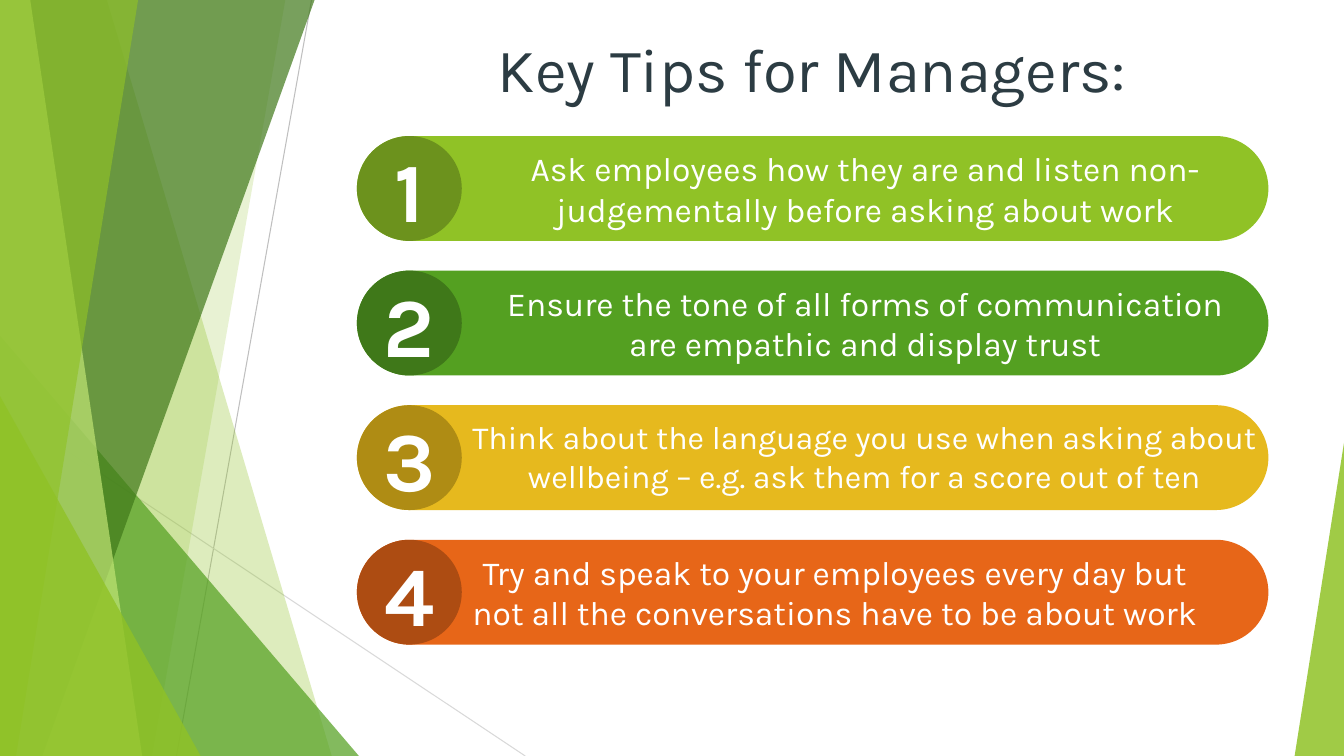
from dataclasses import dataclass

from lxml import etree
from pptx import Presentation
from pptx.dml.color import RGBColor
from pptx.enum.shapes import MSO_CONNECTOR, MSO_SHAPE
from pptx.enum.text import MSO_ANCHOR, PP_ALIGN
from pptx.oxml.ns import qn
from pptx.util import Inches, Pt

LINE = MSO_CONNECTOR.STRAIGHT
PILL = MSO_SHAPE.ROUNDED_RECTANGLE
DISC = MSO_SHAPE.OVAL
WEDGE = MSO_SHAPE.ISOSCELES_TRIANGLE
TOP = MSO_ANCHOR.TOP
MIDDLE = MSO_ANCHOR.MIDDLE
CENTER = PP_ALIGN.CENTER

FONT = "Karla"
WIDTH, HEIGHT = 13.33, 7.5
COLORS = {
    "white": "FFFFFF", "slate": "2C3C43", "gray": "BFBFBF", "silver": "D9D9D9",
    "lime": "90C226", "olive": "6C921D", "pale": "C0E474",
    "green": "54A021", "forest": "3F7819",
    "gold": "E6B91E", "bronze": "AF8C14",
    "orange": "E76618", "rust": "AD4C12",
}

# Row geometry
LEFT, FIRST, PITCH = 3.54, 1.35, 1.335
LENGTH, SIZE = 9.04, 1.04


@dataclass
class Ray:
    start: tuple
    end: tuple
    color: str


@dataclass
class Band:
    """Panel from the left edge to a slanted side."""
    upper: float
    lower: float
    color: str
    alpha: int


@dataclass
class Corner:
    """Right triangle standing on the bottom edge."""
    left: float
    top: float
    width: float
    peak: float
    color: str
    alpha: int


@dataclass
class Tip:
    text: str
    fill: str
    dark: str
    left: float = 4.88
    width: float = 7.4
    size: int = 24


DECOR = [
    Ray((3.09, 0), (1.75, HEIGHT), "gray"),
    Ray((0, 4.03), (5.21, HEIGHT), "silver"),
    Band(1.06, 3.29, "lime", 30),
    Band(2.83, 1.51, "lime", 20),
    Corner(0, 3.33, 3.56, 0, "green", 72),
    Band(3.12, 0.42, "forest", 70),
    Band(0.3, 1.41, "pale", 70),
    Band(1.37, 0.16, "lime", 65),
    Corner(0, 3.93, 1.99, 0, "lime", 80),
    Corner(12.84, 4.39, 0.49, 1, "lime", 85),
]
TIPS = [
    Tip("Ask employees how they are and listen non-judgementally before asking about work",
        "lime", "olive"),
    Tip("Ensure the tone of all forms of communication are empathic and display trust",
        "green", "forest"),
    Tip("Think about the language you use when asking about wellbeing – e.g. ask them "
        "for a score out of ten", "gold", "bronze", left=4.58, width=8, size=23),
    Tip("Try and speak to your employees every day but not all the conversations "
        "have to be about work", "orange", "rust", left=4.58),
]


def rgb(name: str) -> RGBColor:
    return RGBColor.from_string(COLORS[name])


def paint(shape, color: str, alpha: int = 100) -> None:
    shape.shadow.inherit = False
    shape.line.fill.background()
    shape.fill.solid()
    shape.fill.fore_color.rgb = rgb(color)
    if alpha < 100:
        tint = shape.fill._xPr.find(qn("a:solidFill"))[0]
        etree.SubElement(tint, qn("a:alpha"), val=str(alpha * 1000))


def add_shape(shapes, kind, left: float, top: float, width: float, height: float,
              color: str, alpha: int = 100, adjust: float | None = None) -> None:
    shape = shapes.add_shape(kind, Inches(left), Inches(top), Inches(width), Inches(height))
    if adjust is not None:
        shape.adjustments[0] = adjust
    paint(shape, color, alpha)


def add_text(shapes, text: str, left: float, top: float, width: float, height: float, *,
             size: int, color: str = "white", bold: bool = False,
             anchor=TOP, wrap: bool = True) -> None:
    box = shapes.add_textbox(Inches(left), Inches(top), Inches(width), Inches(height))
    frame = box.text_frame
    frame.word_wrap = wrap
    frame.vertical_anchor = anchor
    line = frame.paragraphs[0]
    line.alignment = CENTER
    run = line.add_run()
    run.text = text
    run.font.name = FONT
    run.font.size = Pt(size)
    run.font.bold = bold
    run.font.color.rgb = rgb(color)


def add_ray(shapes, ray: Ray) -> None:
    ends = [Inches(n) for n in (*ray.start, *ray.end)]
    line = shapes.add_connector(LINE, *ends)
    line.line.color.rgb = rgb(ray.color)
    line.line.width = Pt(0.75)
    etree.SubElement(line._element.spPr, qn("a:effectLst"))


def add_band(shapes, band: Band) -> None:
    base = Inches(HEIGHT)
    form = shapes.build_freeform(Inches(band.upper), 0)
    form.add_line_segments([(0, 0), (0, base), (Inches(band.lower), base)])
    paint(form.convert_to_shape(), band.color, band.alpha)


def add_decor(shapes, part: Ray | Band | Corner) -> None:
    if isinstance(part, Ray):
        add_ray(shapes, part)
    elif isinstance(part, Band):
        add_band(shapes, part)
    else:
        add_shape(shapes, WEDGE, part.left, part.top, part.width, HEIGHT - part.top,
                  part.color, part.alpha, part.peak)


def add_tip(shapes, index: int, tip: Tip) -> None:
    top = FIRST + index * PITCH
    add_shape(shapes, PILL, LEFT, top, LENGTH, SIZE, tip.fill, adjust=0.5)
    add_shape(shapes, DISC, LEFT, top, SIZE, SIZE, tip.dark)
    add_text(shapes, str(index + 1), LEFT, top - 0.03, SIZE, 1.11,
             size=60, bold=True, anchor=MIDDLE, wrap=False)
    add_text(shapes, tip.text, tip.left, top + 0.07, tip.width, 0.91, size=tip.size)


def main() -> None:
    deck = Presentation()
    deck.slide_width, deck.slide_height = Inches(WIDTH), Inches(HEIGHT)
    shapes = deck.slides.add_slide(deck.slide_layouts[6]).shapes

    # Slanted backdrop
    for part in DECOR:
        add_decor(shapes, part)

    # Title and numbered tips
    add_text(shapes, "Key Tips for Managers:", 3.36, 0.26, 9.4, 1.44,
             size=44, color="slate")
    for index, tip in enumerate(TIPS):
        add_tip(shapes, index, tip)

    deck.save("out.pptx")


if __name__ == "__main__":
    main()
